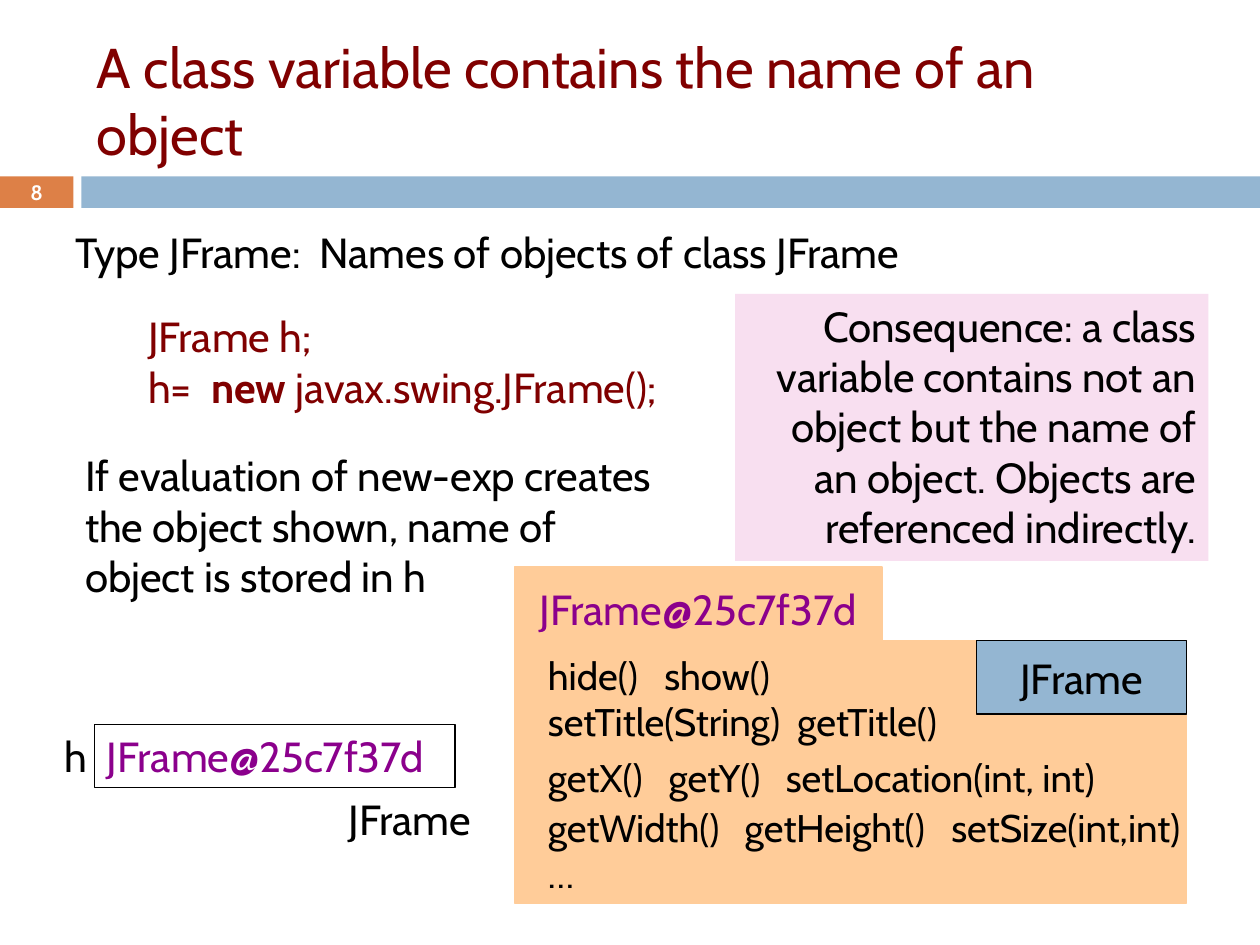
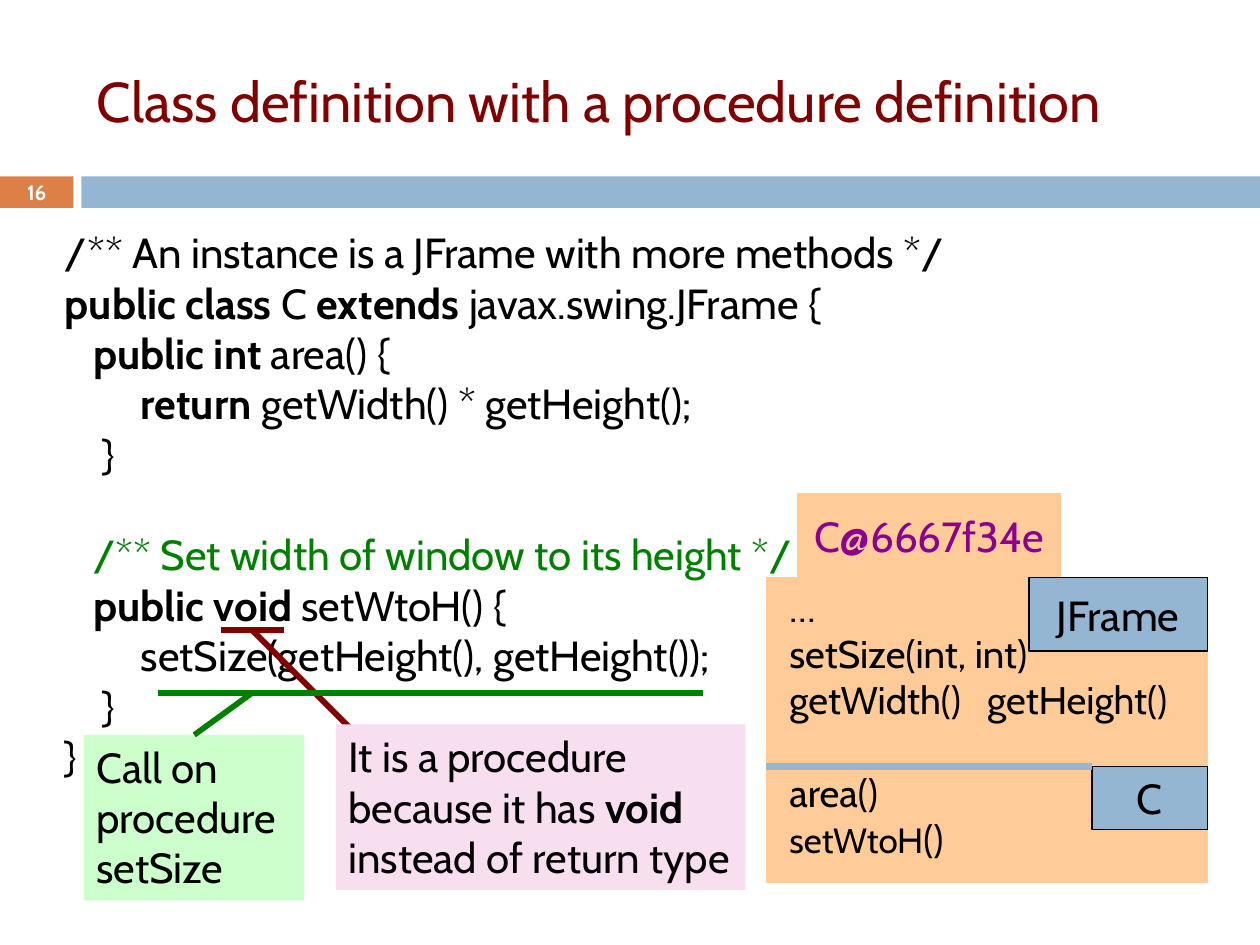
"""Build two lecture slides on class variables and procedure definitions."""
from dataclasses import dataclass, field

from lxml.etree import SubElement
from pptx import Presentation
from pptx.dml.color import RGBColor as Rgb
from pptx.enum.shapes import MSO_CONNECTOR as Connector, MSO_SHAPE as Shape
from pptx.enum.text import MSO_ANCHOR as Anchor, MSO_AUTO_SIZE as AutoSize, PP_ALIGN as Align
from pptx.oxml.ns import qn
from pptx.util import Pt

COLORS = {
    "black": "000000",
    "white": "FFFFFF",
    "maroon": "800000",
    "purple": "8B008C",
    "green": "008000",
    "blue": "94B6D2",
    "rust": "DD8047",
    "orange": "FFCC99",
    "pink": "F8DFF0",
    "mint": "CCFFCC",
}
FONT = "Cabin"
BODY_SIZE = 24
METHOD_SIZE = 22
SPACE_WIDTH = 5.43
BAND_TOP, BAND_HEIGHT = 100.8, 18
TITLE_ONLY_LAYOUT = 5
TOP_SIDE = 0


@dataclass
class Line:
    """A paragraph: backticks enclose runs that take the accent format."""
    text: str
    level: int = 0
    before: float = 0
    color: str = ""
    tabs: tuple = ()
    accent: dict = field(default_factory=lambda: {"bold": True})


def rgb(name):
    return Rgb.from_string(COLORS[name])


def add_tab_stops(paragraph, positions):
    tab_list = SubElement(paragraph._p.get_or_add_pPr(), qn("a:tabLst"))
    for position in positions:
        SubElement(tab_list, qn("a:tab"), pos=str(Pt(position)), algn="l")


def write_text(shape, lines, size=BODY_SIZE, color="black", bold=False,
               align=Align.LEFT, anchor=Anchor.TOP, wrap=True):
    frame = shape.text_frame
    frame.auto_size = AutoSize.NONE
    frame.word_wrap = wrap
    frame.vertical_anchor = anchor
    for index, line in enumerate(lines):
        line = Line(line) if isinstance(line, str) else line
        paragraph = frame.add_paragraph() if index else frame.paragraphs[0]
        paragraph.alignment = align
        if line.before:
            paragraph.space_before = Pt(line.before)
        if line.level:
            properties = paragraph._p.get_or_add_pPr()
            properties.set("marL", str(Pt(line.level * SPACE_WIDTH)))
            properties.set("indent", "0")
        if line.tabs:
            add_tab_stops(paragraph, line.tabs)
        for position, part in enumerate(line.text.split("`")):
            if not part:
                continue
            run = paragraph.add_run()
            run.text = part
            accent = line.accent if position % 2 else {}
            run.font.name = FONT
            run.font.size = Pt(accent.get("size", size))
            run.font.bold = accent.get("bold", bold)
            run.font.color.rgb = rgb(line.color or color)


def add_text(slide, bounds, lines, **text_format):
    box = slide.shapes.add_textbox(*map(Pt, bounds))
    write_text(box, lines, **text_format)


def add_box(slide, bounds, fill, lines=(), outline=None, **text_format):
    box = slide.shapes.add_shape(Shape.RECTANGLE, *map(Pt, bounds))
    box.shadow.inherit = False
    box.fill.solid()
    box.fill.fore_color.rgb = rgb(fill)
    if outline:
        box.line.color.rgb = rgb(outline)
        box.line.width = Pt(0.75)
    else:
        box.line.fill.background()
    write_text(box, lines, **text_format)
    return box


def add_label(slide, bounds, fill, text, outline="black", color="black"):
    add_box(slide, bounds, fill, [text], outline, color=color,
            align=Align.CENTER, anchor=Anchor.MIDDLE, wrap=False)


def add_line(slide, start, end, color, width=3.25):
    line = slide.shapes.add_connector(Connector.STRAIGHT, *map(Pt, start + end))
    line.line.color.rgb = rgb(color)
    line.line.width = Pt(width)
    SubElement(line._element.spPr, qn("a:effectLst"))
    return line


def add_slide(presentation, title, number):
    slide = presentation.slides.add_slide(presentation.slide_layouts[TITLE_ONLY_LAYOUT])
    heading = slide.shapes.title
    heading.left, heading.top, heading.width, heading.height = map(Pt, (48, 18, 642, 78))
    write_text(heading, [title], size=32, color="maroon", anchor=Anchor.MIDDLE)
    add_box(slide, (0, BAND_TOP, 42, BAND_HEIGHT), "rust")
    add_box(slide, (46.5, BAND_TOP, 673.5, BAND_HEIGHT), "blue")
    add_text(slide, (0, 100, 42, 19.5), [number], size=11.9, color="white", bold=True,
             align=Align.CENTER, anchor=Anchor.MIDDLE)
    return slide


def add_class_variable_slide(presentation):
    slide = add_slide(presentation, "A class variable contains the name of an object", "8")
    add_text(slide, (36, 126, 636, 36),
             [Line("Type JFrame:\tNames of objects of class JFrame", tabs=(139.5,))])

    add_box(slide, (294, 366, 384, 150), "orange", outline="orange")
    add_label(slide, (294, 324, 210, 48), "orange", "JFrame@25c7f37d",
              outline="orange", color="purple")
    methods = {"size": METHOD_SIZE, "wrap": False}
    add_text(slide, (306, 372, 264, 54),
             [Line("hide()\tshow()", tabs=(66.5,)),
              Line("setTitle(String)\tgetTitle()", tabs=(142.5,))],
             anchor=Anchor.MIDDLE, **methods)
    add_text(slide, (306, 420, 354, 48),
             [Line("getX()\tgetY()\tsetLocation(int, int)", tabs=(69, 136))],
             anchor=Anchor.MIDDLE, **methods)
    add_text(slide, (306, 456, 360, 60),
             [Line("getWidth()\tgetHeight()\tsetSize(int,int)", tabs=(112.5, 230.5)), "…"],
             **methods)
    add_label(slide, (558, 366, 120, 42), "blue", "JFrame")

    add_text(slide, (30, 414, 25, 36), ["h"], wrap=False)
    add_text(slide, (192, 450, 84, 36), ["JFrame"], wrap=False)
    add_text(slide, (77.5, 174, 311, 65.5),
             ["JFrame h;", Line("h=\t`new `javax.swing.JFrame();", tabs=(36,))],
             color="maroon", wrap=False)
    add_text(slide, (41.5, 253.5, 342, 94),
             ["If evaluation of new-exp creates the object shown, "
              "name of object is stored in h"])
    add_box(slide, (54, 414, 206, 36), "white", ["JFrame@25c7f37d"], "black",
            color="purple", wrap=False)
    add_box(slide, (420, 168, 270.5, 152.5), "pink",
            ["Consequence: a class variable contains not an object but the name of "
             "an object. Objects are referenced indirectly."], align=Align.RIGHT)


def add_procedure_slide(presentation):
    slide = add_slide(presentation, "Class definition with a procedure definition", "16")
    add_text(slide, (30, 126, 636, 327), [
        "/** An instance is a JFrame with more methods */",
        "`public class `C `extends `javax.swing.JFrame {",
        Line("`public int` area() {", level=3),
        Line("`return `getWidth() * getHeight();", level=8),
        Line("}", level=4),
        Line("/** Set width of window to its height */", level=3, before=28.75, color="green"),
        Line("`public void `setWtoH() {", level=3),
        Line("setSize(getHeight(), getHeight());", level=8),
        Line("}", level=4),
        "}",
    ])

    add_box(slide, (438, 330, 252, 174), "orange", outline="orange")
    add_label(slide, (456, 282, 150, 48), "orange", "C@6667f34e",
              outline="orange", color="purple")
    add_text(slide, (444, 330, 228, 42), [
        "…",
        "setSize(int, int)",
        Line("getWidth()\tgetHeight()", tabs=(113,)),
        Line("area()", before=26.5),
        Line("`setWtoH`()", accent={"size": 20}),
    ], size=METHOD_SIZE, wrap=False)
    add_label(slide, (588, 330, 102, 42), "blue", "JFrame")
    add_label(slide, (624, 438, 66, 36), "blue", "C")
    add_line(slide, (438, 438), (624, 438), "blue", width=4)

    add_line(slide, (126, 360), (162, 360), "maroon")
    add_line(slide, (144, 360), (210, 426), "maroon")
    add_box(slide, (192, 414, 234, 94.5), "pink",
            ["It is a procedure because it has `void` instead of return type"])
    call_note = add_box(slide, (48, 420, 126, 94.5), "mint", ["Call on procedure setSize"])
    add_line(slide, (90, 396), (402, 396), "green")
    call_pointer = add_line(slide, (111, 420), (144, 396), "green")
    call_pointer.begin_connect(call_note, TOP_SIDE)


def main():
    presentation = Presentation()
    presentation.slide_width, presentation.slide_height = Pt(720), Pt(540)
    add_class_variable_slide(presentation)
    add_procedure_slide(presentation)
    presentation.save("out.pptx")


if __name__ == "__main__":
    main()
